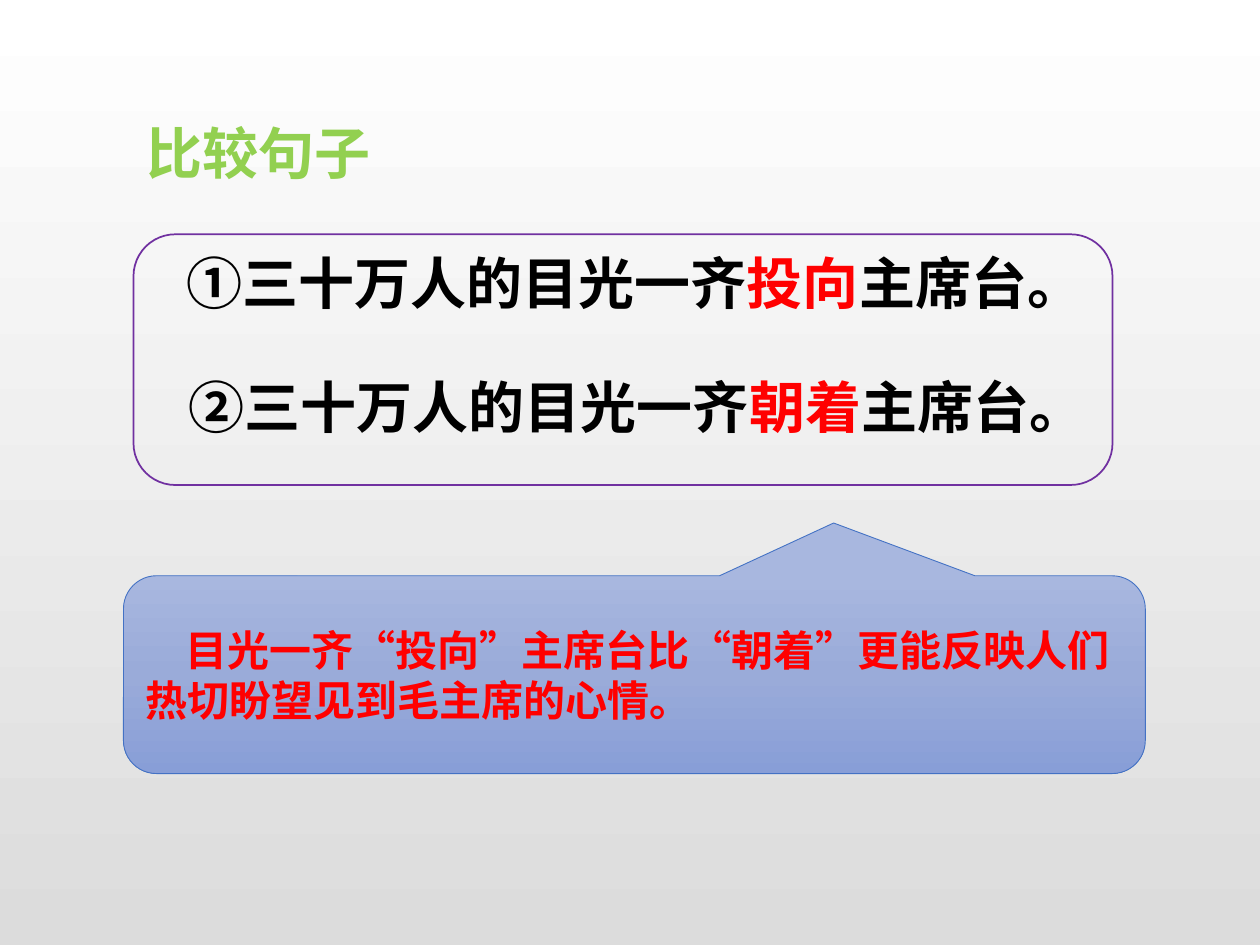
import copy

import pptx
import pptx.dml.color
import pptx.enum.shapes
import pptx.enum.text
import pptx.oxml.ns
import pptx.util

FONT = "Noto Sans CJK SC"
GREEN, BLACK, RED, PURPLE, BLUE = "92D050", "000000", "FF0000", "7030A0", "4472C4"
BACKDROP = [(0, "FFFFFF"), (1, "DCDCDC")]
CALLOUT_FILL = [(0, "A8B7DF"), (0.5, "9AABD9"), (1, "889ED7")]

HEADING = "比较句子"
SENTENCES = [
    ("①三十万人的目光一齐", "投向", "主席台。"),
    ("②三十万人的目光一齐", "朝着", "主席台。"),
]
EXPLANATION = "目光一齐“投向”主席台比“朝着”更能反映人们热切盼望见到毛主席的心情。"

# Shares of the slide in percent: left, top, width, height
HEADING_AREA = (10.6, 11.87, 20, 8.53)
FRAME_AREA = (10.6, 24.8, 77.7, 26.53)
SENTENCE_AREA = (13.8, 25.6, 78, 8.53)
SENTENCE_STEP = (0.2, 13.2)
CALLOUT_AREA = (9.8, 60.93, 81.1, 20.93)
CALLOUT_SHAPE = (0.195, -0.767, 0.167)


def rgb(value):
    """Turn a hex string into a colour."""
    return pptx.dml.color.RGBColor.from_string(value)


def place(area):
    """Turn percent shares of the slide into lengths."""
    sides = (deck.slide_width, deck.slide_height) * 2
    return [round(side * share / 100) for side, share in zip(sides, area)]


def shade(fill, element, stops):
    """Apply a top-to-bottom gradient with the given stops."""
    fill.gradient()
    fill.gradient_angle = 270
    stop_list = next(element.iter(pptx.oxml.ns.qn("a:gsLst")))
    for _ in stops[2:]:
        stop_list.insert(1, copy.deepcopy(stop_list[0]))
    for stop, (position, color) in zip(fill.gradient_stops, stops):
        stop.position = position
        stop.color.rgb = rgb(color)


def write(frame, runs, size=32, wrap=True, indent=0, anchor="TOP"):
    """Write coloured runs as one left-aligned bold paragraph."""
    frame.word_wrap = wrap
    frame.auto_size = pptx.enum.text.MSO_AUTO_SIZE.NONE
    frame.vertical_anchor = pptx.enum.text.MSO_ANCHOR[anchor]
    paragraph = frame.paragraphs[0]
    paragraph.alignment = pptx.enum.text.PP_ALIGN.LEFT
    if indent:
        paragraph._p.get_or_add_pPr().set("indent", str(pptx.util.Inches(indent)))
    for text, color in runs:
        run = paragraph.add_run()
        run.text = text
        run.font.size = pptx.util.Pt(size)
        run.font.bold = True
        run.font.name = FONT
        run.font.color.rgb = rgb(color)
        east_asian = run._r.get_or_add_rPr().makeelement(
            pptx.oxml.ns.qn("a:ea"), {"typeface": FONT})
        run._r.rPr.find(pptx.oxml.ns.qn("a:latin")).addnext(east_asian)


def add_panel(kind, area, line_color, line_width):
    """Add an outlined shape without a shadow."""
    panel = slide.shapes.add_shape(pptx.enum.shapes.MSO_SHAPE[kind], *place(area))
    panel.shadow.inherit = False
    panel.line.color.rgb = rgb(line_color)
    panel.line.width = pptx.util.Pt(line_width)
    return panel


deck = pptx.Presentation()
deck.slide_width, deck.slide_height = pptx.util.Inches(10), pptx.util.Inches(7.5)
slide = deck.slides.add_slide(deck.slide_layouts[5])
shade(slide.background.fill, slide.element, BACKDROP)

heading = slide.shapes.title
heading.left, heading.top, heading.width, heading.height = place(HEADING_AREA)
write(heading.text_frame, [(HEADING, GREEN)], wrap=False)

frame = add_panel("ROUNDED_RECTANGLE", FRAME_AREA, PURPLE, 1)
frame.fill.background()

for row, sentence in enumerate(SENTENCES):
    left, top, width, height = SENTENCE_AREA
    area = (left + row * SENTENCE_STEP[0], top + row * SENTENCE_STEP[1], width, height)
    line = slide.shapes.add_textbox(*place(area))
    write(line.text_frame, zip(sentence, (BLACK, RED, BLACK)))

callout = add_panel("ROUNDED_RECTANGULAR_CALLOUT", CALLOUT_AREA, BLUE, 0.5)
for index, value in enumerate(CALLOUT_SHAPE):
    callout.adjustments[index] = value
shade(callout.fill, callout.element, CALLOUT_FILL)
write(callout.text_frame, [(EXPLANATION, RED)], size=24, indent=0.32, anchor="MIDDLE")

deck.save("out.pptx")
